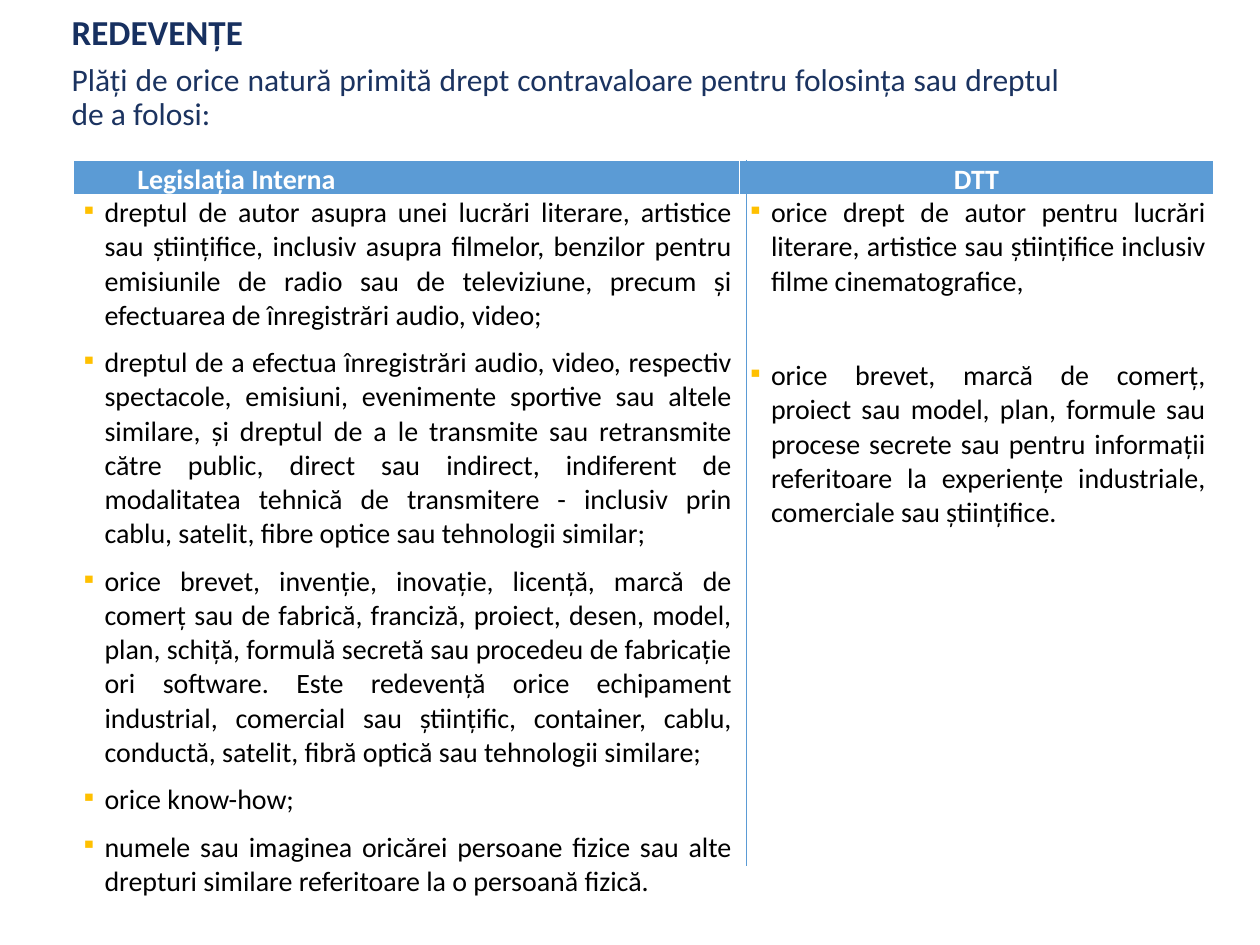
from lxml import etree
from pptx import Presentation
from pptx.dml.color import RGBColor
from pptx.enum.shapes import MSO_CONNECTOR
from pptx.enum.text import MSO_ANCHOR, PP_ALIGN
from pptx.oxml.ns import qn
from pptx.util import Inches, Pt

LEFT, CENTER, JUSTIFY = PP_ALIGN.LEFT, PP_ALIGN.CENTER, PP_ALIGN.JUSTIFY
TOP, MIDDLE = MSO_ANCHOR.TOP, MSO_ANCHOR.MIDDLE
STRAIGHT = MSO_CONNECTOR.STRAIGHT
NAVY, TITLE_NAVY, BLUE = "1B3360", "173060", "5B9BD5"
WHITE, BLACK, GOLD = "FFFFFF", "000000", "FFC000"

prs = Presentation()
prs.slide_width, prs.slide_height = Inches(10), Inches(7.5)
slide = prs.slides.add_slide(prs.slide_layouts[6])

# Grid: 100 columns by 75 rows
COL, ROW = prs.slide_width / 100, prs.slide_height / 75


def color(hex_string):
    return RGBColor.from_string(hex_string)


def write(paragraph, text, size=16, ink=BLACK, bold=False, align=LEFT,
          spacing=1.0, before=0, bullet=None):
    paragraph.alignment, paragraph.line_spacing = align, spacing
    paragraph.space_before = Pt(before)
    if bullet:
        props = paragraph._p.get_or_add_pPr()
        props.set("marL", str(Inches(0.19)))
        props.set("indent", str(-Inches(0.22)))
        tint = etree.SubElement(props, qn("a:buClr"))
        etree.SubElement(tint, qn("a:srgbClr"), val=GOLD)
        etree.SubElement(props, qn("a:buSzPct"), val="80000")
        etree.SubElement(props, qn("a:buChar"), char=bullet)
    run = paragraph.add_run()
    run.text = text
    run.font.name, run.font.size, run.font.bold = "Calibri", Pt(size), bold
    run.font.color.rgb = color(ink)


# Title and introduction: top row, width, height, anchor, text, format
headings = [
    (1.0, 85.9, 3.4, MIDDLE, "REDEVENȚE",
     dict(size=20, ink=TITLE_NAVY, bold=True, spacing=0.9)),
    (4.6, 80.4, 7, TOP,
     "Plăți de orice natură primită drept contravaloare pentru folosința "
     "sau dreptul de a folosi:",
     dict(size=18, ink=NAVY, align=JUSTIFY, spacing=0.9)),
]
for top, width, height, anchor, text, style in headings:
    heading = slide.shapes.add_textbox(
        int(4.7 * COL), int(top * ROW), int(width * COL), int(height * ROW))
    heading.text_frame.word_wrap = True
    heading.text_frame.vertical_anchor = anchor
    write(heading.text_frame.paragraphs[0], text, **style)

# Comparison: header, its alignment, left margin, width, (space before, item)
comparison = [
    ("Legislația Interna", LEFT, 0.51, 52.9, [
        (0, "dreptul de autor asupra unei lucrări literare, artistice sau "
            "științifice, inclusiv asupra filmelor, benzilor pentru emisiunile "
            "de radio sau de televiziune, precum și efectuarea de înregistrări "
            "audio, video;"),
        (7.5, "dreptul de a efectua înregistrări audio, video, respectiv "
              "spectacole, emisiuni, evenimente sportive sau altele similare, "
              "și dreptul de a le transmite sau retransmite către public, "
              "direct sau indirect, indiferent de modalitatea tehnică de "
              "transmitere - inclusiv prin cablu, satelit, fibre optice sau "
              "tehnologii similar;"),
        (7.5, "orice brevet, invenție, inovație, licență, marcă de comerț sau "
              "de fabrică, franciză, proiect, desen, model, plan, schiță, "
              "formulă secretă sau procedeu de fabricație ori software. Este "
              "redevență orice echipament industrial, comercial sau "
              "științific, container, cablu, conductă, satelit, fibră optică "
              "sau tehnologii similare;"),
        (7.5, "orice know-how;"),
        (7.5, "numele sau imaginea oricărei persoane fizice sau alte drepturi "
              "similare referitoare la o persoană fizică."),
    ]),
    ("DTT", CENTER, 0.06, 37.6, [
        (0, "orice drept de autor pentru lucrări literare, artistice sau "
            "științifice inclusiv filme cinematografice,"),
        (34.5, "orice brevet, marcă de comerț, proiect sau model, plan, "
               "formule sau procese secrete sau pentru informații referitoare "
               "la experiențe industriale, comerciale sau științifice."),
    ]),
]
HEADER_ROWS, ITEM_ROWS = 2.6, 57.6
table = slide.shapes.add_table(
    2, 2, int(5.8 * COL), int(12.7 * ROW),
    int(90.5 * COL), int((HEADER_ROWS + ITEM_ROWS) * ROW)).table
table.rows[0].height = int(HEADER_ROWS * ROW)
table.rows[1].height = int(ITEM_ROWS * ROW)

for index, (header, align, margin, width, items) in enumerate(comparison):
    table.columns[index].width = int(width * COL)
    header_cell, items_cell = table.cell(0, index), table.cell(1, index)
    write(header_cell.text_frame.paragraphs[0], header, ink=WHITE, bold=True,
          align=align, spacing=1.07)
    frame = items_cell.text_frame
    for number, (gap, item) in enumerate(items):
        paragraph = frame.add_paragraph() if number else frame.paragraphs[0]
        write(paragraph, item, align=JUSTIFY, before=gap, bullet="▪")

    # Margins, fills and white borders
    for cell, fill, left, above, below in ((header_cell, BLUE, margin, 1, 3),
                                           (items_cell, WHITE, 0.06, 3, 1)):
        cell.margin_left, cell.margin_right = Inches(left), Inches(0.06)
        cell.margin_top = cell.margin_bottom = 0
        cell.fill.solid()
        cell.fill.fore_color.rgb = color(fill)
        weights = (("a:lnL", 1), ("a:lnR", 1), ("a:lnT", above), ("a:lnB", below))
        for order, (side, weight) in enumerate(weights):
            border = etree.Element(qn(side), w=str(Pt(weight)))
            paint = etree.SubElement(border, qn("a:solidFill"))
            etree.SubElement(paint, qn("a:srgbClr"), val=WHITE)
            cell._tc.get_or_add_tcPr().insert(order, border)

# Column divider
divider = slide.shapes.add_connector(
    STRAIGHT, int(59.25 * COL), int(12.7 * ROW),
    int(59.25 * COL), int(68.7 * ROW))
divider.line.color.rgb = color(BLUE)
divider.line.width = Pt(0.5)
etree.SubElement(divider._element.spPr, qn("a:effectLst"))

prs.save("out.pptx")
